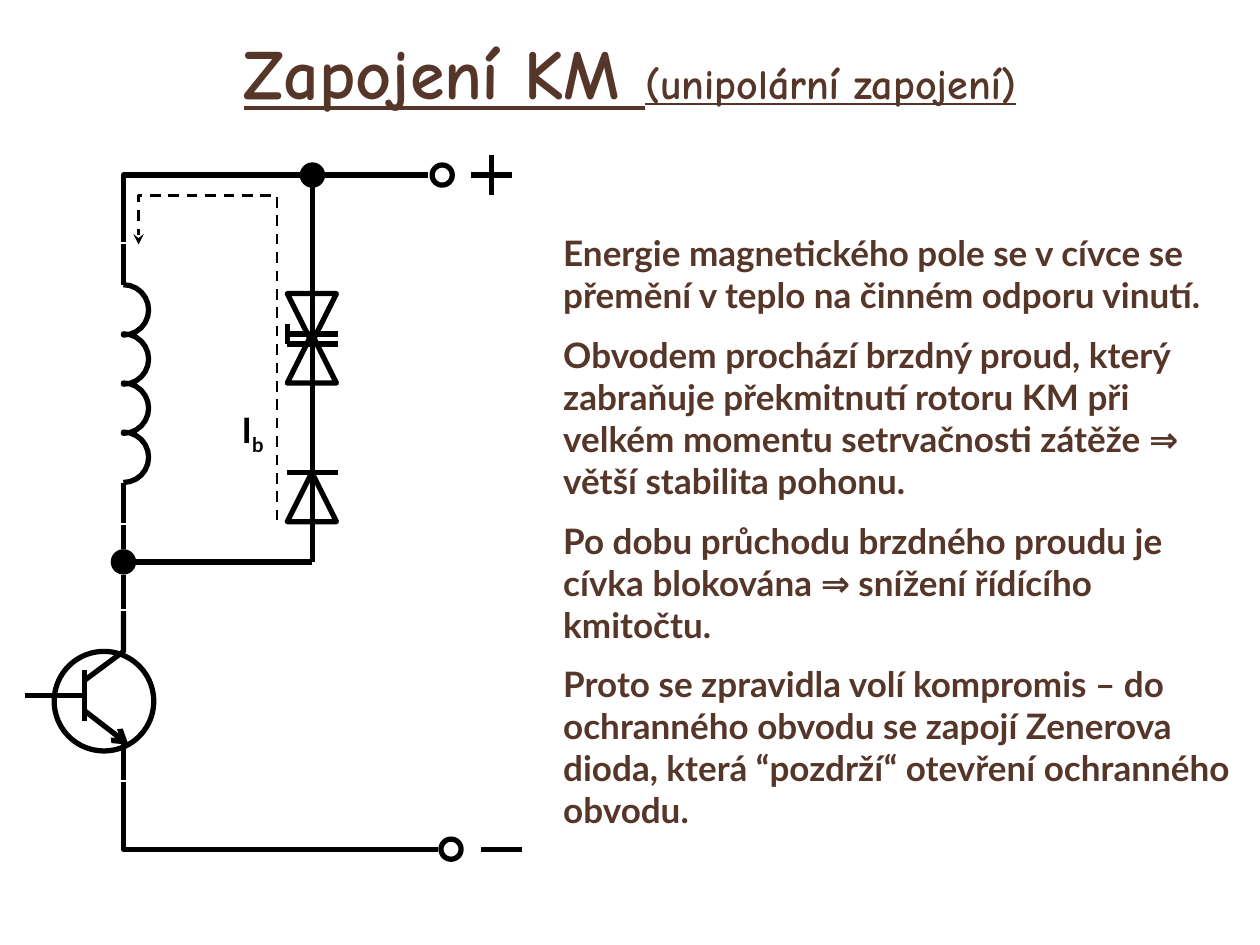
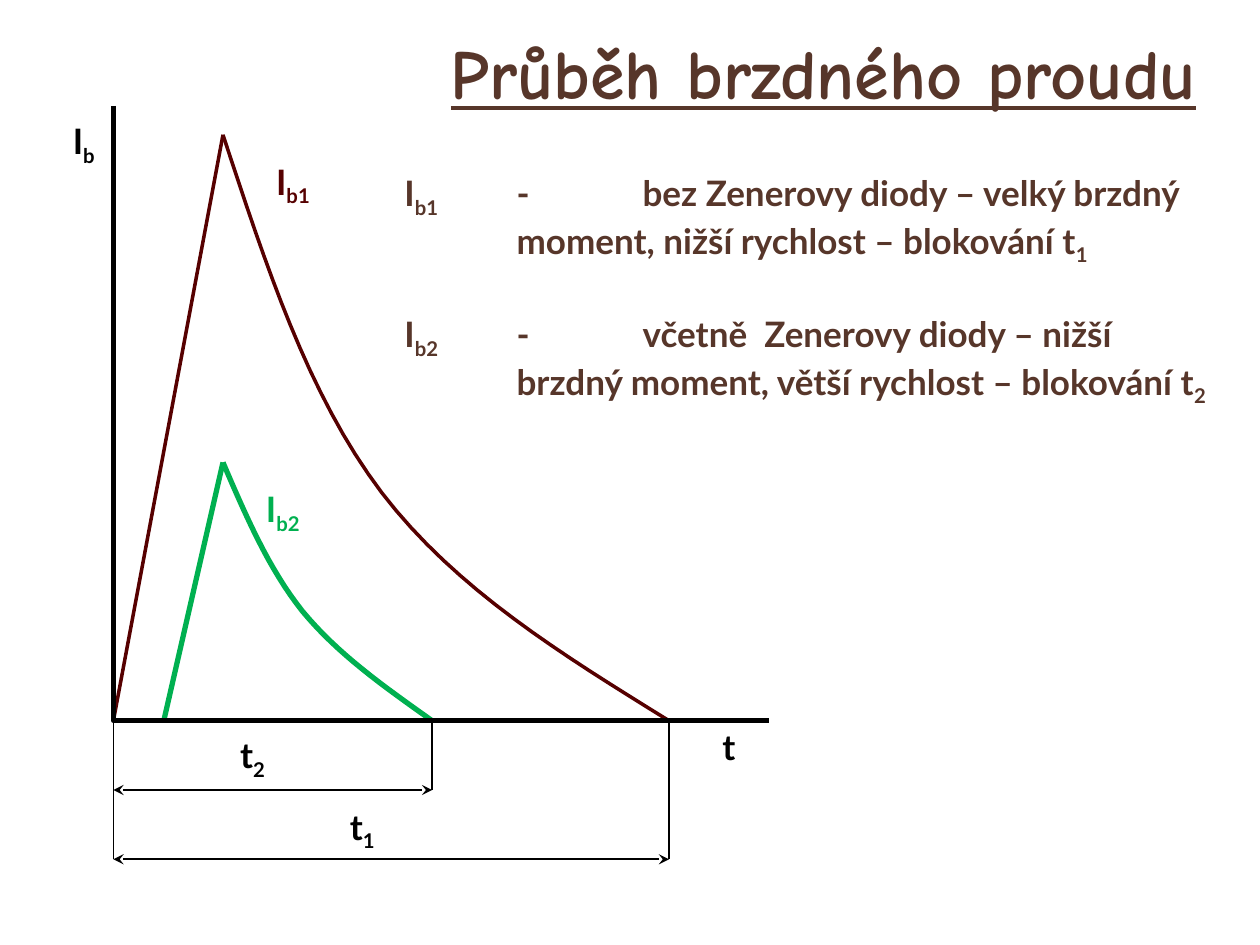
from math import cos, pi, sin

from lxml import etree
from pptx import Presentation
from pptx.dml.color import RGBColor
from pptx.enum.dml import MSO_LINE
from pptx.enum.shapes import MSO_CONNECTOR, MSO_SHAPE
from pptx.enum.text import MSO_ANCHOR, MSO_AUTO_SIZE, PP_ALIGN
from pptx.oxml.ns import qn
from pptx.util import Inches, Pt

STRAIGHT = MSO_CONNECTOR.STRAIGHT
OVAL, TRIANGLE = MSO_SHAPE.OVAL, MSO_SHAPE.ISOSCELES_TRIANGLE
DASH, CENTER = MSO_LINE.DASH, PP_ALIGN.CENTER
TOP, MIDDLE, NO_FIT = MSO_ANCHOR.TOP, MSO_ANCHOR.MIDDLE, MSO_AUTO_SIZE.NONE

BROWN, BLACK, RED, GREEN = "57362A", "000000", "560000", "00B050"
HEAD = {"name": "Comic Neue", "size": Pt(40), "bold": True, "underline": True}
TEXT = {"name": "Lato", "size": Pt(20), "bold": True}


def ink(shape, color, width, **ends):
    """Style an outline without shadow; ends maps headEnd/tailEnd to an arrow type."""
    shape.line.color.rgb = RGBColor.from_string(color)
    shape.line.width = Pt(width)
    if ends.pop("dash", False):
        shape.line.dash_style = DASH
    props = shape._element.spPr
    for end, kind in ends.items():
        etree.SubElement(props.find(qn("a:ln")), qn("a:" + end), type=kind)
    etree.SubElement(props, qn("a:effectLst"))


def write(par, text, style, color):
    """Add runs to a paragraph; text between underscores is subscript."""
    for i, part in enumerate(text.split("_")):
        if not part:
            continue
        run = par.add_run()
        run.text = part
        for key, value in style.items():
            setattr(run.font, key, value)
        run.font.color.rgb = RGBColor.from_string(color)
        if i % 2:
            run._r.get_or_add_rPr().set("baseline", "-25000")


prs = Presentation()
prs.slide_width, prs.slide_height = Inches(10), Inches(7.5)
layout = prs.slide_layouts[1]
wiring = prs.slides.add_slide(layout)
graph = prs.slides.add_slide(layout)

# Titles
titles = [
    (wiring, 0.12, 9.76, [("Zapojení KM ", 40), ("(unipolární zapojení)", 24)]),
    (graph, 3.19, 6.69, [("Průběh brzdného proudu", 40)]),
]
for slide, left, width, parts in titles:
    title = slide.shapes.title
    title.left, title.top = Inches(left), Inches(0.13)
    title.width, title.height = Inches(width), Inches(0.87)
    frame = title.text_frame
    frame.auto_size, frame.vertical_anchor = NO_FIT, MIDDLE
    par = frame.paragraphs[0]
    par.alignment = CENTER
    for text, size in parts:
        write(par, text, HEAD | {"size": Pt(size)}, BROWN)

# Body texts: slide, box, hanging indent, gap between paragraphs, paragraphs
bodies = [
    (wiring, (4.37, 1.79, 5.51, 5.27), 0, 10, [
        "Energie magnetického pole se v cívce se přemění v teplo na činném "
        "odporu vinutí.",
        "Obvodem prochází brzdný proud, který zabraňuje překmitnutí rotoru KM "
        "při velkém momentu setrvačnosti zátěže ⇒ větší stabilita pohonu.",
        "Po dobu průchodu brzdného proudu je cívka blokována ⇒ snížení "
        "řídícího kmitočtu.",
        "Proto se zpravidla volí kompromis – do ochranného obvodu se zapojí "
        "Zenerova dioda, která “pozdrží“ otevření ochranného obvodu.",
    ]),
    (graph, (3.11, 1.31, 6.69, 1.87), 0.89, 26, [
        "I_b1_\t-\tbez Zenerovy diody – velký brzdný moment, nižší rychlost "
        "– blokování t_1_",
        "I_b2_\t-\tvčetně  Zenerovy diody – nižší brzdný moment, větší "
        "rychlost – blokování t_2_",
    ]),
]
for slide, box, hang, gap, texts in bodies:
    body = slide.placeholders[1]
    body.left, body.top, body.width, body.height = map(Inches, box)
    frame = body.text_frame
    frame.auto_size, frame.vertical_anchor = NO_FIT, TOP
    for i, text in enumerate(texts):
        par = frame.add_paragraph() if i else frame.paragraphs[0]
        par.space_before = Pt(gap if i else 0)
        props = par._p.get_or_add_pPr()
        props.set("marL", str(Inches(hang)))
        props.set("indent", str(-Inches(hang)))
        props.set("defTabSz", str(Inches(1)))
        etree.SubElement(props, qn("a:buNone"))
        write(par, text, TEXT, BROWN)

# Circuit symbols: kind, left, top, size, fill, rotation
symbols = [
    (OVAL, 0.43, 5.17, 0.79, None, 0),
    (OVAL, 2.4, 1.31, 0.16, BLACK, 0),
    (OVAL, 0.9, 4.38, 0.16, BLACK, 0),
    (OVAL, 3.43, 1.31, 0.16, None, 0),
    (OVAL, 3.5, 6.66, 0.16, None, 0),
    (TRIANGLE, 2.28, 2.33, 0.39, None, 180),
    (TRIANGLE, 2.28, 2.65, 0.39, None, 0),
    (TRIANGLE, 2.28, 3.75, 0.39, None, 0),
]
for kind, left, top, size, fill, turn in symbols:
    symbol = wiring.shapes.add_shape(
        kind, Inches(left), Inches(top), Inches(size), Inches(size))
    symbol.rotation = turn
    if fill:
        symbol.fill.solid()
        symbol.fill.fore_color.rgb = RGBColor.from_string(fill)
    else:
        symbol.fill.background()
    ink(symbol, BLACK, 3)

# Coil of four half turns
coil = [(0.98 + 0.2 * cos(a), 2.46 + 0.39 * turn + 0.2 * sin(a))
        for turn in range(4)
        for a in [pi * (step / 12 - 0.5) for step in range(13)]]

# Falling currents: a start point, then Bézier segments
falls = []
for start, *parts in [
    [(1.77, 1.07), ((2.11, 2.1), (2.44, 3.13), (3.03, 3.91)),
     ((3.62, 4.68), (4.47, 5.2), (5.31, 5.72))],
    [(1.77, 3.67), ((1.95, 4.09), (2.13, 4.51), (2.4, 4.85)),
     ((2.68, 5.19), (3.05, 5.45), (3.43, 5.72))],
]:
    curve = [start]
    for b, c, d in parts:
        a = curve[-1]
        for t in [step / 16 for step in range(1, 17)]:
            s = 1 - t
            curve.append(tuple(
                s**3 * a[k] + 3 * s * s * t * b[k] + 3 * s * t * t * c[k] + t**3 * d[k]
                for k in range(2)))
    falls.append(curve)

wires = [
    coil,
    [(0.98, 1.94), (0.98, 2.26)],
    [(0.98, 3.83), (0.98, 4.15)],
    [(0.98, 4.17), (0.98, 4.36)],
    [(0.98, 4.56), (0.98, 4.83)],
    [(0.98, 5.88), (0.98, 6.19)],
    # transistor
    [(0.67, 5.32), (0.67, 5.72)],
    [(0.67, 5.52), (0.2, 5.52)],
    [(0.67, 5.4), (0.98, 5.17), (0.98, 4.85)],
    # supply rails and their signs
    [(3.4, 1.39), (2.58, 1.39)],
    [(0.98, 1.92), (0.98, 1.39), (2.38, 1.39)],
    [(3.48, 6.74), (0.98, 6.74), (0.98, 6.21)],
    [(3.74, 1.39), (4.06, 1.39)],
    [(3.9, 1.23), (3.9, 1.55)],
    [(3.82, 6.74), (4.14, 6.74)],
    # diode branch
    [(2.48, 1.39), (2.48, 2.02)],
    [(2.48, 2.02), (2.48, 3.04)],
    [(2.48, 3.04), (2.48, 3.44)],
    [(2.48, 3.43), (2.48, 4.46)],
    [(2.48, 4.46), (0.98, 4.46)],
    [(2.28, 2.65), (2.68, 2.65)],
    [(2.68, 2.73), (2.28, 2.73)],
    [(2.28, 2.73), (2.28, 2.57)],
    [(2.28, 3.75), (2.68, 3.75)],
]
both = {"headEnd": "stealth", "tailEnd": "stealth"}
lines = [(wiring, BLACK, 3, wire, {}) for wire in wires] + [
    (wiring, BLACK, 3, [(0.67, 5.64), (1.02, 5.91)], {"tailEnd": "arrow"}),
    (wiring, BLACK, 1.5, [(2.2, 4.13), (2.2, 1.55), (1.1, 1.55), (1.1, 1.94)],
     {"dash": True, "tailEnd": "stealth"}),
    (graph, RED, 2, [(0.9, 5.72), (1.77, 1.07)], {}),
    (graph, RED, 2, falls[0], {}),
    (graph, GREEN, 3, [(1.3, 5.72), (1.77, 3.67)], {}),
    (graph, GREEN, 3, falls[1], {}),
    (graph, BLACK, 3, [(0.9, 0.84), (0.9, 5.72), (6.1, 5.72)], {}),
    (graph, BLACK, 1, [(0.9, 5.72), (0.9, 6.82)], {}),
]
for x, y in [(3.43, 6.27), (5.31, 6.82)]:
    lines += [(graph, BLACK, 1, [(x, 5.72), (x, y)], {}),
              (graph, BLACK, 1, [(0.9, y), (x, y)], both)]

for slide, color, width, points, ends in lines:
    points = [(Inches(x), Inches(y)) for x, y in points]
    if len(points) == 2:
        line = slide.shapes.add_connector(STRAIGHT, *points[0], *points[1])
    else:
        pen = slide.shapes.build_freeform(*points[0])
        pen.add_line_segments(points[1:], close=False)
        line = pen.convert_to_shape()
        line.fill.background()
    ink(line, color, width, **ends)

# Labels
labels = [
    (wiring, 1.77, 3.2, "I_b_", BLACK),
    (graph, 0.43, 0.91, "I_b_", BLACK),
    (graph, 5.55, 5.72, "t", BLACK),
    (graph, 2.01, 3.83, "I_b2_", GREEN),
    (graph, 2.09, 1.23, "I_b1_", RED),
    (graph, 2.64, 6.35, "t_1_", BLACK),
    (graph, 1.77, 5.78, "t_2_", BLACK),
]
for slide, left, top, text, color in labels:
    label = slide.shapes.add_textbox(
        Inches(left), Inches(top), Inches(0.47), Inches(0.41))
    frame = label.text_frame
    frame.word_wrap = True
    for side in ("left", "top", "right", "bottom"):
        setattr(frame, "margin_" + side, Inches(0.04))
    frame.paragraphs[0].alignment = CENTER
    write(frame.paragraphs[0], text, TEXT, color)

prs.save("out.pptx")
